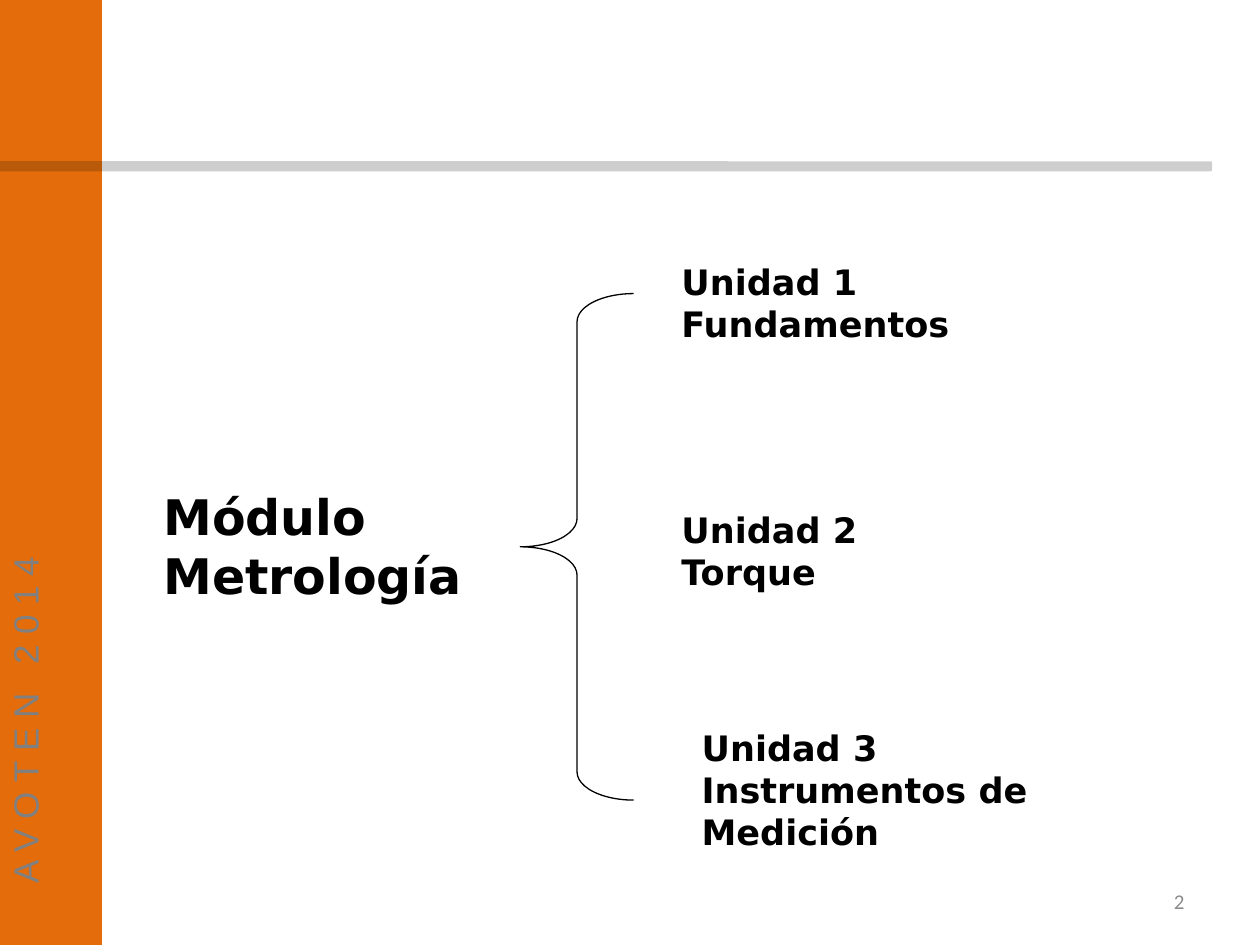
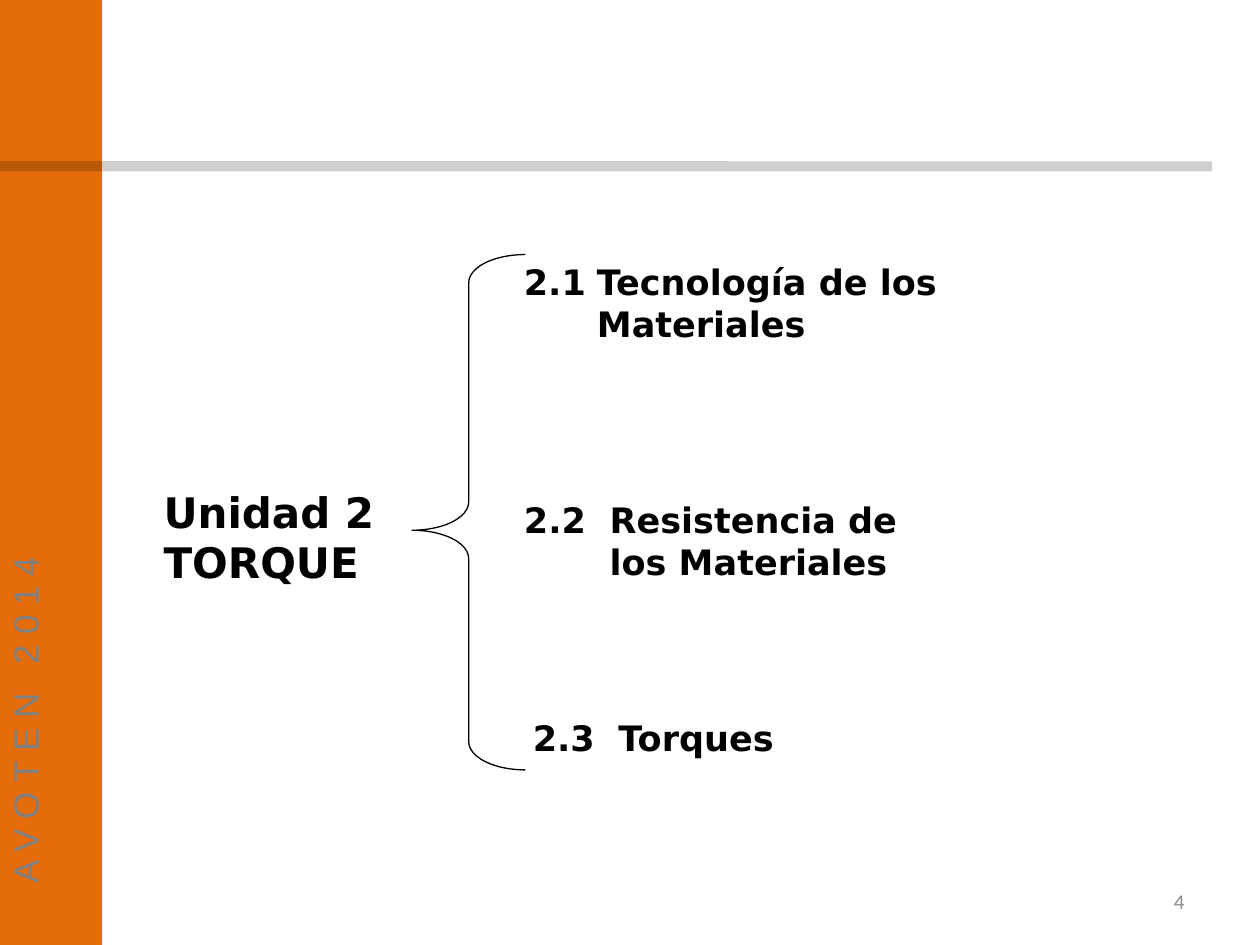
from pptx import Presentation
from pptx.dml.color import RGBColor
from pptx.enum.shapes import MSO_SHAPE as Shape
from pptx.enum.text import MSO_ANCHOR as Anchor, MSO_AUTO_SIZE as AutoSize, PP_ALIGN as Align
from pptx.oxml.ns import qn
from pptx.util import Pt
from lxml.etree import SubElement

PX = 9144  # 100 px to the inch
ORANGE = RGBColor(0xE4, 0x6C, 0x0A)
NEAR_BLACK = RGBColor(0x0D, 0x0D, 0x0D)
BLACK = RGBColor(0, 0, 0)
GRAY = RGBColor(0x80, 0x80, 0x80)
NUMBER_GRAY = RGBColor(0x8C, 0x8C, 0x8C)


class Deck:
    def __init__(self):
        self.presentation = Presentation()
        self.presentation.slide_width = 1000 * PX
        self.presentation.slide_height = 750 * PX
        self.slide = None

    def start_slide(self, number):
        """Add a blank slide with the side band, rule, label and number."""
        self.slide = self.presentation.slides.add_slide(self.presentation.slide_layouts[6])
        self.band(Shape.RECTANGLE, (-2, 0, 83, 750), ORANGE)
        self.band(Shape.ROUNDED_RECTANGLE, (-3, 128, 965, 8), NEAR_BLACK, 20)
        self.side_label("AVOTEN 2014")
        number_box = self.text((717, 695, 233, 40), [str(number)], 12, "Calibri",
                               NUMBER_GRAY, bold=False, align=Align.RIGHT)
        number_box.text_frame.vertical_anchor = Anchor.MIDDLE

    def shape(self, kind, box):
        shape = self.slide.shapes.add_shape(kind, *(length * PX for length in box))
        shape.shadow.inherit = False
        return shape

    def band(self, kind, box, color, opacity=100):
        band = self.shape(kind, box)
        band.fill.solid()
        band.fill.fore_color.rgb = color
        band.line.fill.background()
        if opacity < 100:
            color_element = band.fill._xPr.find(".//" + qn("a:srgbClr"))
            SubElement(color_element, qn("a:alpha")).set("val", str(opacity * 1000))

    def brace(self, box, point=0.5):
        """Draw a left brace whose tip lies at the fraction point of its height."""
        brace = self.shape(Shape.LEFT_BRACE, box)
        brace.adjustments[0] = 0.249
        brace.adjustments[1] = point
        brace.fill.background()
        brace.line.color.rgb = BLACK
        brace.line.width = Pt(0.75)

    def text(self, box, lines, size, font="DejaVu Sans", color=BLACK, bold=True,
             align=Align.LEFT, hanging=0):
        text_box = self.slide.shapes.add_textbox(*(length * PX for length in box))
        frame = text_box.text_frame
        frame.word_wrap = True
        frame.auto_size = AutoSize.NONE
        for index, line in enumerate(lines):
            paragraph = frame.add_paragraph() if index else frame.paragraphs[0]
            paragraph.text = line
            paragraph.alignment = align
            if hanging:
                properties = paragraph._p.get_or_add_pPr()
                properties.set("marL", str(hanging * PX))
                properties.set("indent", str(-hanging * PX))
            paragraph.font.size = Pt(size)
            paragraph.font.name = font
            paragraph.font.bold = bold
            paragraph.font.color.rgb = color
        return text_box

    def side_label(self, label):
        """Write a letter-spaced label that reads upwards."""
        frame = self.text((-2, 29, 54, 682), [label], 20, "Arial", GRAY, bold=False).text_frame
        frame._txBody.bodyPr.set("vert", "vert270")
        frame.paragraphs[0].runs[0]._r.get_or_add_rPr().set("spc", "556")


def add_module_slide(deck):
    deck.start_slide(2)
    deck.text((120, 381, 551, 104), ["Módulo", "Metrología"], 28)
    deck.brace((413, 233, 90, 402))
    units = [
        (531, 202, 77, ["Unidad 1 Fundamentos"]),
        (531, 399, 77, ["Unidad 2", "Torque"]),
        (547, 572, 111, ["Unidad 3", "Instrumentos de Medición"]),
    ]
    for left, top, height, lines in units:
        deck.text((left, top, 299, height), lines, 20)


def add_torque_slide(deck):
    deck.start_slide(4)
    deck.text((120, 381, 239, 91), ["Unidad 2", "TORQUE"], 24)
    deck.brace((327, 202, 90, 409), 0.535)
    topics = [
        ((406, 202, 520, 77), "2.1\tTecnología de los\vMateriales", 58),
        ((406, 391, 528, 77), "2.2\tResistencia de\vlos Materiales", 68),
        ((413, 564, 299, 44), "2.3\tTorques", 68),
    ]
    for box, topic, hanging in topics:
        deck.text(box, [topic], 20, hanging=hanging)


def main():
    deck = Deck()
    add_module_slide(deck)
    add_torque_slide(deck)
    deck.presentation.save("out.pptx")


if __name__ == "__main__":
    main()
